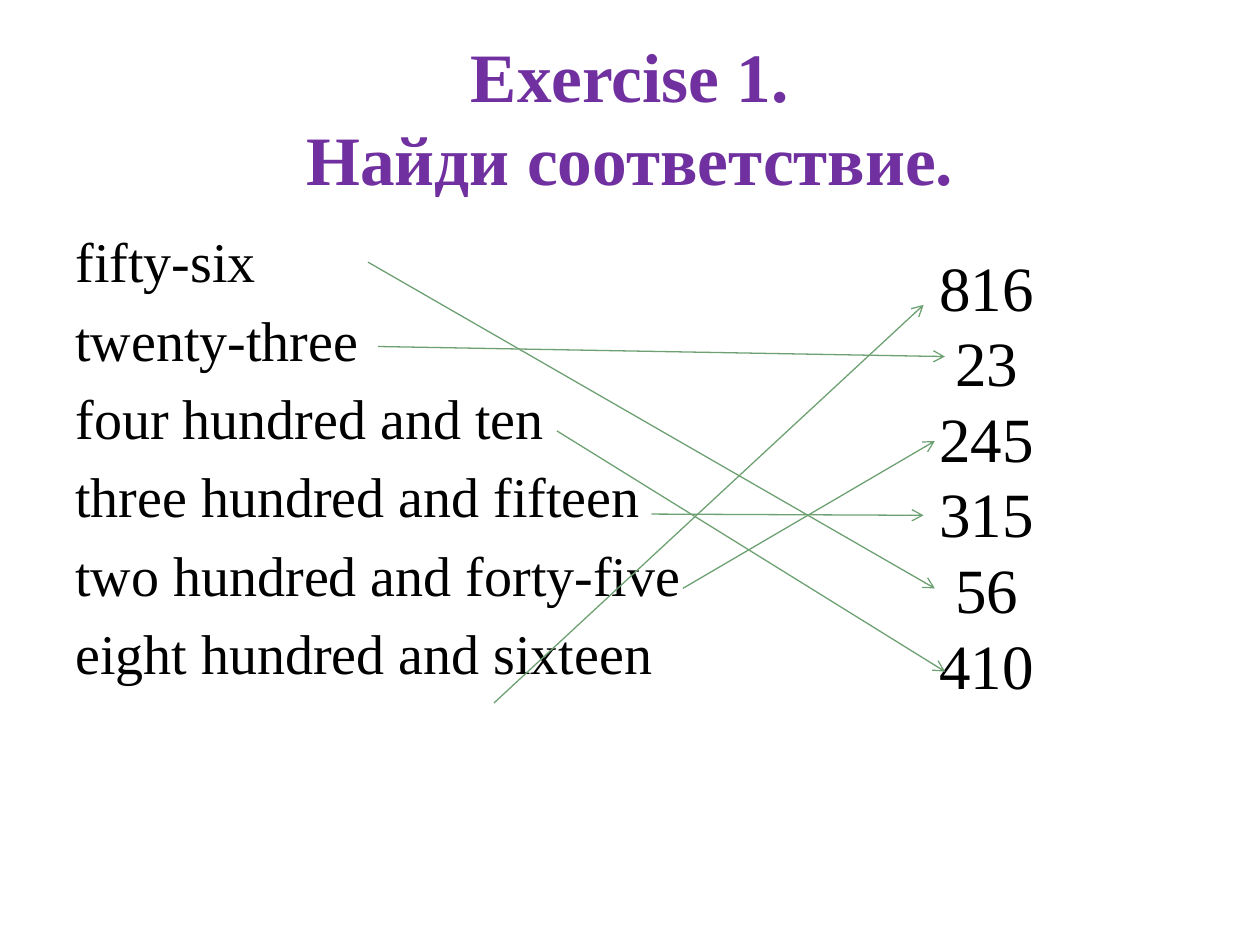
import pptx
import pptx.util
import pptx.dml.color
import pptx.enum.text
import pptx.enum.shapes
import pptx.oxml
import pptx.oxml.ns

Inches, Pt = pptx.util.Inches, pptx.util.Pt
ALIGN = pptx.enum.text.PP_ALIGN

FONT = "Times New Roman"
HUES = {"title": "7030A0", "text": "000000", "arrow": "6EA172"}
TITLE = "Exercise 1.\vНайди соответствие."
WORDS = [
    "fifty-six",
    "twenty-three",
    "four hundred and ten",
    "three hundred and fifteen",
    "two hundred and forty-five",
    "eight hundred and sixteen",
]
NUMBERS = ["816", "23", "245", "315", "56", "410"]
ARROWS = [
    (2.92, 2.08, 7.42, 4.67),
    (3, 2.75, 7.5, 2.83),
    (4.42, 3.42, 7.5, 5.33),
    (3.92, 5.58, 7.33, 2.42),
    (5.42, 4.67, 7.42, 3.5),
    (5.17, 4.08, 7.33, 4.09),
]


def color(name):
    """Return the named colour."""
    return pptx.dml.color.RGBColor.from_string(HUES[name])


def style(para, size, hue, align, bold=False):
    """Format one paragraph."""
    para.alignment = align
    font = para.font
    font.name, font.size, font.bold = FONT, Pt(size), bold
    font.color.rgb = color(hue)


def add_list(slide, lines, box, size, align, gap=0):
    """Add a column of lines in a text box."""
    frame = slide.shapes.add_textbox(*map(Inches, box)).text_frame
    frame.word_wrap = True
    frame.text = "\n".join(lines)
    for i, para in enumerate(frame.paragraphs):
        style(para, size, "text", align)
        para.space_before = Pt(gap if i else 0)


def add_arrow(slide, ends):
    """Draw a thin arrow from a word to its number."""
    kind = pptx.enum.shapes.MSO_CONNECTOR.STRAIGHT
    arrow = slide.shapes.add_connector(kind, *map(Inches, ends))
    arrow.line.color.rgb = color("arrow")
    arrow.line.width = Pt(0.75)
    tail = pptx.oxml.parse_xml(
        f'<a:tailEnd {pptx.oxml.ns.nsdecls("a")} type="arrow"/>')
    arrow.line._get_or_add_ln().append(tail)
    none = pptx.oxml.parse_xml(f'<a:effectLst {pptx.oxml.ns.nsdecls("a")}/>')
    arrow._element.spPr.append(none)


def main():
    """Build the matching exercise."""
    deck = pptx.Presentation()
    deck.slide_width, deck.slide_height = Inches(10), Inches(7.5)
    slide = deck.slides.add_slide(deck.slide_layouts[5])

    title = slide.shapes.title
    title.left, title.top = Inches(0.5), Inches(0.3)
    title.width, title.height = Inches(9), Inches(1.25)
    frame = title.text_frame
    frame.text = TITLE
    frame.auto_size = pptx.enum.text.MSO_AUTO_SIZE.NONE
    frame.vertical_anchor = pptx.enum.text.MSO_ANCHOR.MIDDLE
    style(frame.paragraphs[0], 39.6, "title", ALIGN.CENTER, True)

    add_list(slide, WORDS, (0.5, 1.75, 5.08, 4.95), 32, ALIGN.LEFT, 6.4)
    add_list(slide, NUMBERS, (6.58, 1.92, 2.5, 3.74), 36, ALIGN.CENTER)
    for ends in ARROWS:
        add_arrow(slide, ends)
    deck.save("out.pptx")


if __name__ == "__main__":
    main()
